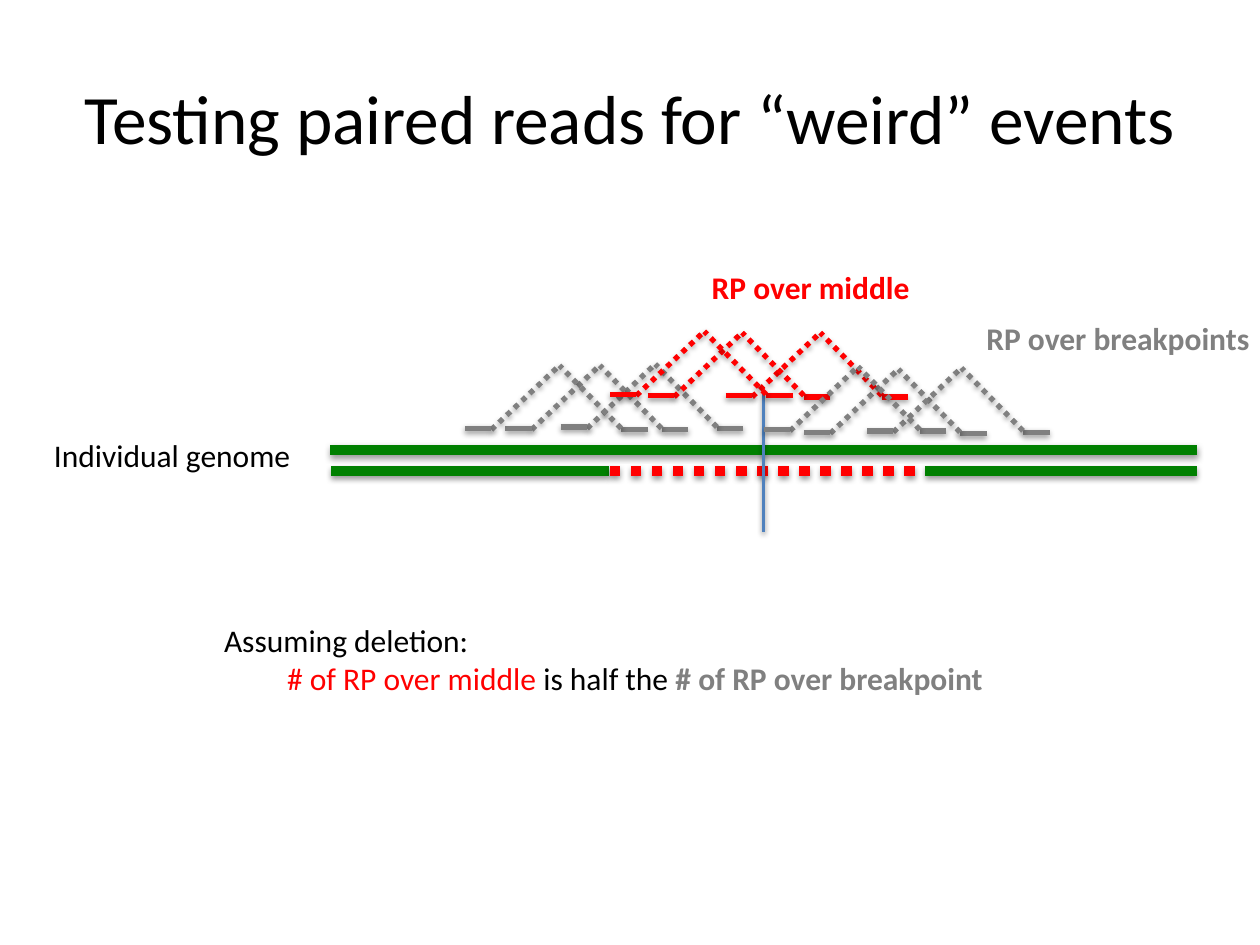
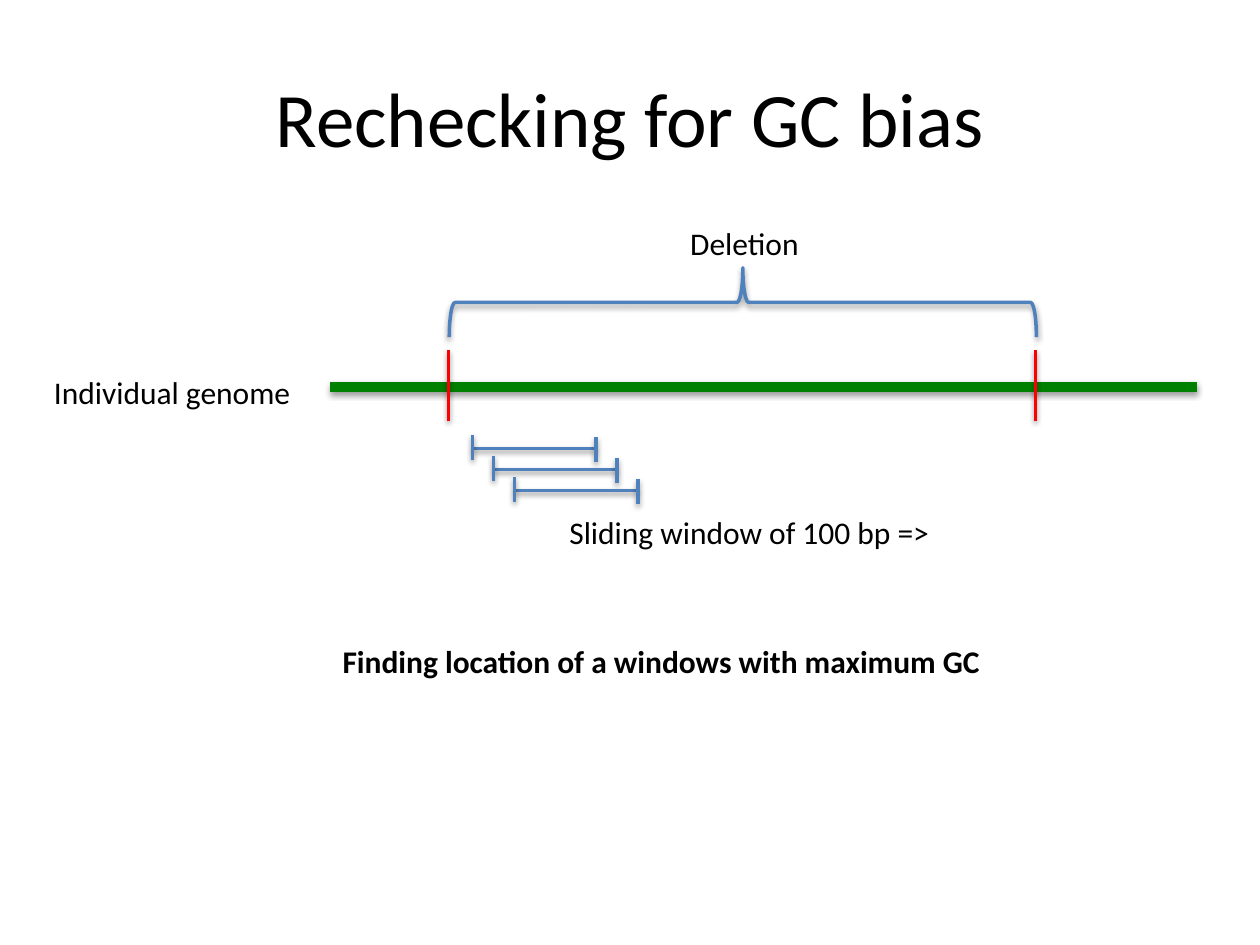
from lxml.etree import SubElement
from pptx import Presentation
from pptx.dml.color import RGBColor
from pptx.enum.dml import MSO_LINE
from pptx.enum.shapes import MSO_CONNECTOR, MSO_SHAPE
from pptx.enum.text import MSO_ANCHOR, MSO_AUTO_SIZE, PP_ALIGN
from pptx.oxml.ns import qn
from pptx.util import Inches, Pt

BLACK, GREEN, RED, GREY, BLUE = "000000", "008000", "FF0000", "808080", "4F81BD"


def color(value):
    return RGBColor.from_string(value)


def add_text(paragraph, text, size=18, fill=BLACK, bold=False):
    run = paragraph.add_run()
    run.text = text
    run.font.name = "Calibri"
    run.font.size = Pt(size)
    run.font.bold = bold
    run.font.color.rgb = color(fill)


def add_shadow(shape):
    effects = SubElement(shape._element.spPr, qn("a:effectLst"))
    shadow = SubElement(effects, qn("a:outerShdw"), blurRad="40000", dist="20000",
                        dir="5400000", rotWithShape="0")
    shade = SubElement(shadow, qn("a:srgbClr"), val=BLACK)
    SubElement(shade, qn("a:alpha"), val="38000")


class Deck:
    def __init__(self):
        self.presentation = Presentation()
        self.presentation.slide_width = Inches(10)
        self.presentation.slide_height = Inches(7.5)
        self.slide = None

    def new_slide(self, title, size):
        layout = self.presentation.slide_layouts[5]
        self.slide = self.presentation.slides.add_slide(layout)
        placeholder = self.slide.shapes.title
        placeholder.left, placeholder.top = Inches(0.5), Inches(0.3)
        placeholder.width, placeholder.height = Inches(9), Inches(1.25)
        placeholder.text_frame.vertical_anchor = MSO_ANCHOR.MIDDLE
        paragraph = placeholder.text_frame.paragraphs[0]
        paragraph.alignment = PP_ALIGN.CENTER
        add_text(paragraph, title, size=size)

    def text_box(self, left, top, width, height=0.4):
        box = self.slide.shapes.add_textbox(
            Inches(left), Inches(top), Inches(width), Inches(height))
        box.text_frame.word_wrap = False
        box.text_frame.auto_size = MSO_AUTO_SIZE.SHAPE_TO_FIT_TEXT
        return box.text_frame

    def label(self, text, left, top, width, **text_format):
        add_text(self.text_box(left, top, width).paragraphs[0], text, **text_format)

    def line(self, x1, y1, x2, y2, stroke, width=2, dotted=False):
        connector = self.slide.shapes.add_connector(
            MSO_CONNECTOR.STRAIGHT, Inches(x1), Inches(y1), Inches(x2), Inches(y2))
        connector.line.color.rgb = color(stroke)
        connector.line.width = Pt(width)
        if dotted:
            connector.line.dash_style = MSO_LINE.ROUND_DOT
        add_shadow(connector)

    def genome(self, y):
        self.line(2.62, y, 9.5, y, GREEN, 6)
        self.label("Individual genome", 0.33, y - 0.16, 2.21)

    def read_pair(self, x, y, stroke):
        apex_x, apex_y = x + 0.75, y - 0.5
        right = x + 1.24
        self.line(x + 0.21, y + 0.01, apex_x, apex_y, stroke, 3, dotted=True)
        self.line(right, y + 0.01, right + 0.21, y + 0.01, stroke, 3)
        self.line(x, y, x + 0.21, y, stroke, 3)
        self.line(right, y, apex_x, apex_y, stroke, 3, dotted=True)

    def read_pairs(self, starts, stroke):
        for x, y in starts:
            self.read_pair(x, y, stroke)

    def window(self, x, y):
        right = x + 0.98
        self.line(x, y, right, y, BLUE)
        self.line(right, y + 0.11, right, y - 0.09, BLUE)
        self.line(x, y + 0.09, x, y - 0.11, BLUE)

    def brace(self, left, top, width, height):
        shape = self.slide.shapes.add_shape(
            MSO_SHAPE.LEFT_BRACE, Inches(left), Inches(top), Inches(width), Inches(height))
        shape.rotation = 90
        shape.fill.background()
        shape.line.color.rgb = color(BLUE)
        shape.line.width = Pt(2)
        add_shadow(shape)


def paired_reads_slide(deck):
    deck.new_slide("Testing paired reads for “weird” events", 39.6)
    deck.genome(3.57)
    for start, end in ((2.63, 4.83), (7.34, 9.5)):
        deck.line(start, 3.74, end, 3.74, GREEN, 6)
    deck.line(4.84, 3.74, 7.33, 3.74, RED, 6, dotted=True)
    deck.read_pairs([(4.45, 3.39), (4.01, 3.4), (6.38, 3.43), (6.88, 3.42)], GREY)
    deck.line(6.06, 4.22, 6.06, 3.13, BLUE)
    deck.read_pairs([(5.76, 3.14), (5.14, 3.14)], RED)
    deck.label("RP over middle", 5.55, 2.08, 1.79, fill=RED, bold=True)
    deck.label("RP over breakpoints", 7.73, 2.48, 2.31, fill=GREY, bold=True)

    frame = deck.text_box(1.68, 4.88, 6.23, 0.71)
    add_text(frame.paragraphs[0], "Assuming deletion:")
    conclusion = frame.add_paragraph()
    conclusion._p.get_or_add_pPr().set("marL", str(Inches(0.5)))
    add_text(conclusion, "# of RP over middle ", fill=RED)
    add_text(conclusion, "is half the ")
    add_text(conclusion, "# of RP over breakpoint", fill=GREY, bold=True)

    deck.read_pairs([(6.06, 3.41), (3.69, 3.4)], GREY)
    deck.read_pair(4.84, 3.13, RED)


def gc_bias_slide(deck):
    deck.new_slide("Rechecking for GC bias", 44)
    deck.genome(3.07)
    for breakpoint_x in (3.56, 8.22):
        deck.line(breakpoint_x, 2.78, breakpoint_x, 3.34, RED)
    deck.brace(5.62, 0.07, 0.55, 4.66)
    deck.label("Deletion", 5.38, 1.73, 1.07)
    for index in range(3):
        shift = index / 6
        deck.window(3.75 + shift, 3.56 + shift)
    deck.label("Sliding window of 100 bp =>", 4.42, 4.02, 3.09)
    deck.label("Finding location of a windows with maximum GC", 2.62, 5.05, 5.32, bold=True)


def main():
    deck = Deck()
    paired_reads_slide(deck)
    gc_bias_slide(deck)
    deck.presentation.save("out.pptx")


if __name__ == "__main__":
    main()
